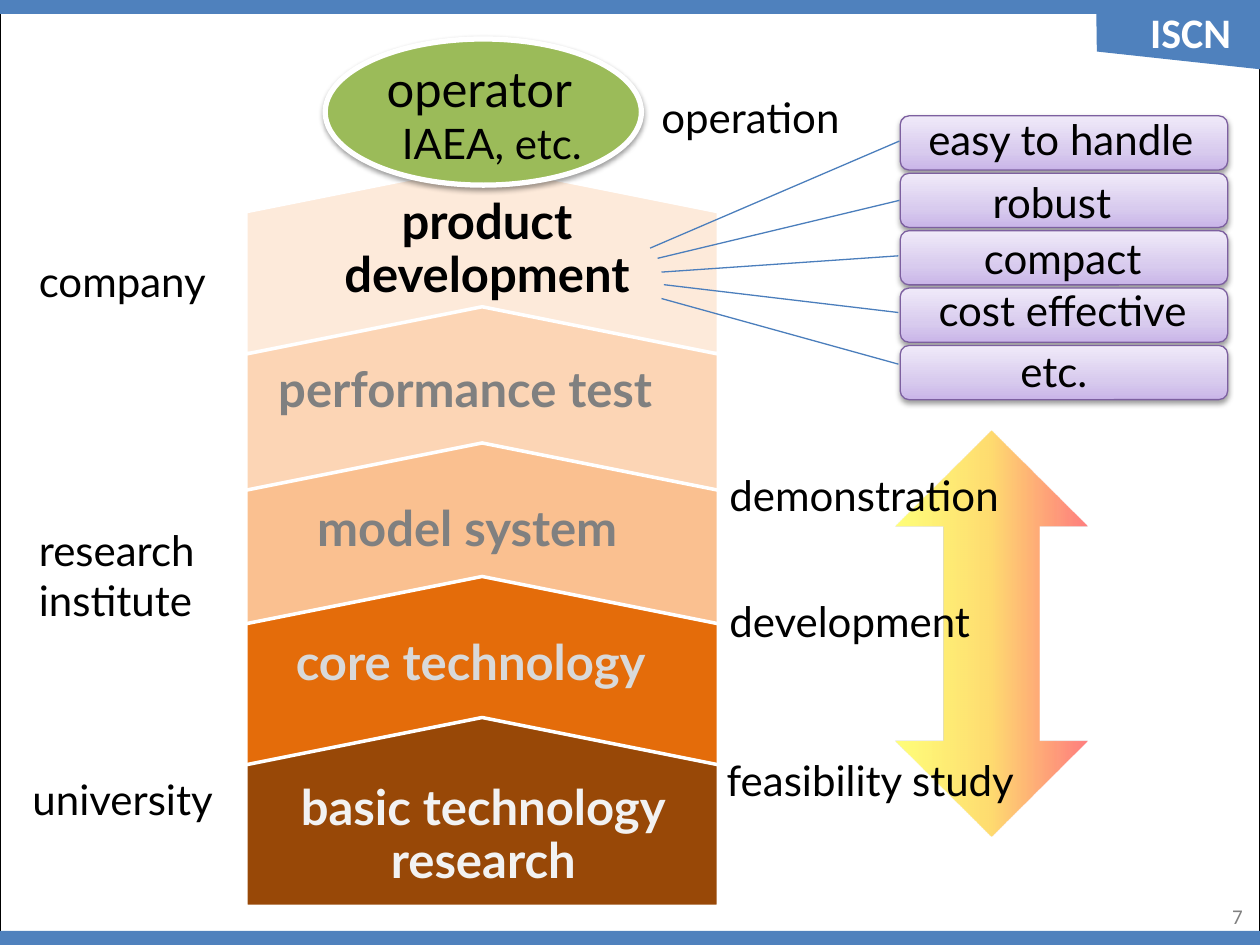
from dataclasses import dataclass
from lxml.etree import SubElement
from pptx import Presentation
from pptx.dml.color import RGBColor as RGB
from pptx.enum.shapes import MSO_CONNECTOR as CONN, MSO_SHAPE as SHP
from pptx.enum.text import MSO_ANCHOR as ANCHOR, PP_ALIGN as ALIGN
from pptx.oxml.ns import qn
from pptx.util import Pt


@dataclass(frozen=True)
class Theme:
    font: str = "Lato"
    frame_font: str = "Calibri"
    label: int = 24
    stage: int = 28
    number: int = 12
    black: str = "000000"
    white: str = "FFFFFF"
    grey: str = "808080"
    light: str = "D9D9D9"
    pale: str = "F2F2F2"
    blue: str = "4F81BD"
    line: str = "4B7EBC"
    green: str = "9BBB59"
    purple: str = "7D60A0"
    lilac: tuple = ((0, "C9B5E8", 100), (35, "D8CBEE", 100), (100, "F0EAF9", 100))
    sunset: tuple = ((0, "FFFF00", 52), (50, "FFC000", 56), (100, "FF0000", 50))
    steps: tuple = ("FDEADA", "FCD5B5", "FAC090", "E46C0A", "984807")


class Deck:
    def __init__(self, theme):
        self.t = theme
        self.prs = Presentation()
        self.prs.slide_width, self.prs.slide_height = Pt(720), Pt(540)
        self.s = self.prs.slides.add_slide(self.prs.slide_layouts[6])

    def paint(self, sp, fill, line, width):
        sp.shadow.inherit = False
        if fill:
            sp.fill.solid()
            sp.fill.fore_color.rgb = RGB.from_string(fill)
        else:
            sp.fill.background()
        if line:
            sp.line.color.rgb = RGB.from_string(line)
            sp.line.width = Pt(width)
        else:
            sp.line.fill.background()
        return sp

    def shape(self, kind, box, fill=None, line=None, width=1):
        sp = self.s.shapes.add_shape(kind, *map(Pt, box))
        return self.paint(sp, fill, line, width)

    def freeform(self, points, fill):
        fb = self.s.shapes.build_freeform(*map(Pt, points[0]), scale=1.0)
        fb.add_line_segments([tuple(map(Pt, pt)) for pt in points[1:]])
        return self.paint(fb.convert_to_shape(), fill, None, 0)

    def color(self, parent, rgb, alpha):
        clr = SubElement(parent, qn("a:srgbClr"), val=rgb)
        SubElement(clr, qn("a:alpha"), val=str(alpha * 1000))

    def gradient(self, sp, stops, angle):
        sp.fill.gradient()
        grad = sp._element.spPr.find(qn("a:gradFill"))
        for child in list(grad):
            grad.remove(child)
        gs_list = SubElement(grad, qn("a:gsLst"))
        for pos, rgb, alpha in stops:
            gs = SubElement(gs_list, qn("a:gs"), pos=str(pos * 1000))
            self.color(gs, rgb, alpha)
        SubElement(grad, qn("a:lin"), ang=str(angle * 60000), scaled="0")

    def shadow(self, sp):
        effects = sp._element.spPr.find(qn("a:effectLst"))
        outer = SubElement(effects, qn("a:outerShdw"), blurRad=str(Pt(3.1)),
                           dist=str(Pt(1.6)), dir="5400000", rotWithShape="0")
        self.color(outer, self.t.black, 38)

    def text(self, lines, box, size=None, color=None, bold=False,
             align=ALIGN.LEFT, spacing=None, font=None, anchor=ANCHOR.TOP):
        tf = self.s.shapes.add_textbox(*map(Pt, box)).text_frame
        tf.word_wrap = True
        tf.vertical_anchor = anchor
        tf.text = lines
        for p in tf.paragraphs:
            p.alignment = align
            p.line_spacing = spacing
            p.font.name = font or self.t.font
            p.font.size = Pt(size or self.t.label)
            p.font.bold = bold
            p.font.color.rgb = RGB.from_string(color or self.t.black)

    def line(self, start, end):
        c = self.s.shapes.add_connector(CONN.STRAIGHT, *map(Pt, start + end))
        c.line.color.rgb = RGB.from_string(self.t.line)
        c.line.width = Pt(0.75)
        SubElement(c._element.spPr, qn("a:effectLst"))


def frame(d):
    t = d.t
    d.shape(SHP.RECTANGLE, (0, 0, 720, 540), line=t.black, width=0.5)
    for y in (0, 532):
        d.shape(SHP.RECTANGLE, (0, y, 720, 8), t.blue)
    d.freeform([(720, 39.6), (626.8, 29.5), (626.4, 0.7), (720, 0.7)], t.blue)
    d.text("ISCN", (643.7, 0, 73.4, 36.7), color=t.white, bold=True,
           align=ALIGN.CENTER, font=t.frame_font)
    d.text("7", (549.4, 509, 167.8, 28.8), t.number, t.grey, align=ALIGN.RIGHT,
           font=t.frame_font, anchor=ANCHOR.MIDDLE)


def features(d):
    for i in range(5):
        sp = d.shape(SHP.ROUNDED_RECTANGLE, (514.4, 66.2 + 32.8 * i, 187.2, 31),
                     line=d.t.purple, width=0.75)
        d.gradient(sp, d.t.lilac, 270)
        d.shadow(sp)
    for name, x, y, w in (("easy to handle", 523.4, 61.2, 172.8),
                          ("robust", 560.2, 97.2, 83.5),
                          ("compact", 555.1, 129.6, 107.3),
                          ("cost effective", 529.2, 159.1, 164.2),
                          ("etc.", 576, 193.7, 58.3)):
        d.text(name, (x, y, w, 36))
    for start, end in (((371.5, 141.8), (514, 80.6)),
                       ((375.8, 147.6), (514, 114.5)),
                       ((378, 155.5), (513.4, 146.2)),
                       ((379.4, 162.7), (513.4, 178.6)),
                       ((378, 170.6), (513.4, 208.1))):
        d.line(start, end)


def stages(d):
    t = d.t
    for y, fill in zip((13, 94.3, 172.1, 248.4, 329), t.steps):
        sp = d.shape(SHP.PENTAGON, (221.5, y, 108, 270), fill, t.white, 2)
        sp.adjustments[0] = 0.25
        sp.rotation = 270
    for name, box, color in (
            ("performance test", (151.9, 201.6, 252.7, 41), t.grey),
            ("model system", (174.2, 280.8, 209.5, 41), t.grey),
            ("core technology", (162, 357.1, 242.6, 41), t.light)):
        d.text(name, box, t.stage, color, True)
    for name, box, color in (
            ("product development", (167, 109.4, 222.5, 68.4), t.black),
            ("basic technology\nresearch", (150.5, 444.2, 251.3, 68.4), t.pale)):
        d.text(name, box, t.stage, color, True, ALIGN.CENTER, 0.9)


def operator(d):
    sp = d.shape(SHP.OVAL, (185.8, 22.3, 180.7, 83.5), d.t.green, d.t.white, 3)
    d.shadow(sp)
    d.text("operator", (213.8, 30.2, 123.8, 41), d.t.stage)
    d.text("IAEA, etc.", (222.5, 63.4, 123.1, 36))


def side_labels(d):
    for name, x, y, w, h in (("company", 15.1, 142.6, 125.3, 36),
                             ("research institute", 15.1, 295.9, 109.4, 65.5),
                             ("university", 11.5, 438.5, 136.8, 36),
                             ("operation", 370.8, 49, 119.5, 36),
                             ("demonstration", 409.7, 265, 172.1, 36),
                             ("development", 409.7, 337, 156.2, 36),
                             ("feasibility study", 408.2, 427.7, 187.9, 36)):
        d.text(name, (x, y, w, h))


def main():
    d = Deck(Theme())
    frame(d)
    arrow = d.shape(SHP.UP_DOWN_ARROW, (511.9, 246.2, 109.4, 231.8))
    d.gradient(arrow, d.t.sunset, 0)
    stages(d)
    operator(d)
    features(d)
    side_labels(d)
    d.prs.save("out.pptx")


if __name__ == "__main__":
    main()
